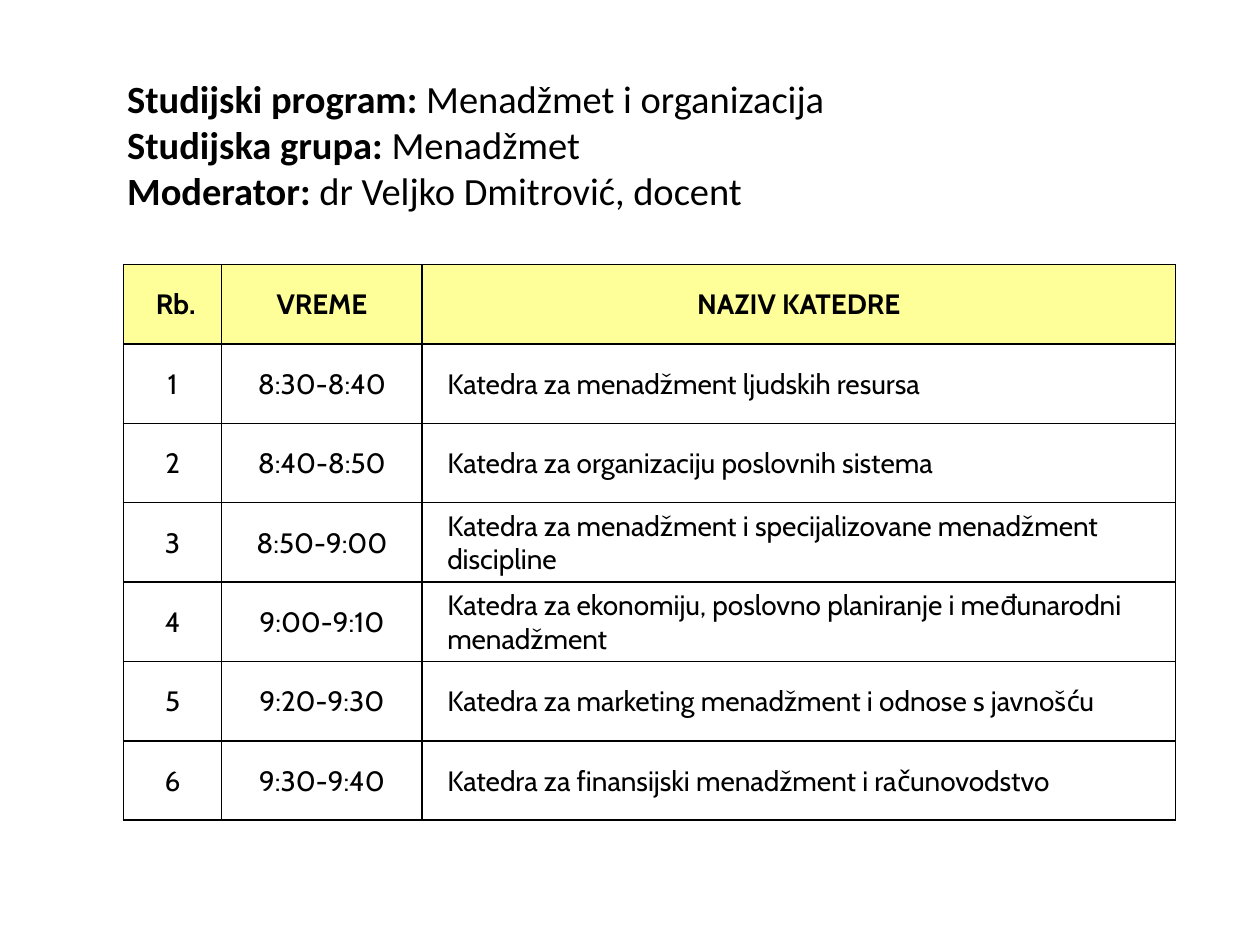
from dataclasses import dataclass

from lxml.etree import fromstring
from pptx import Presentation
from pptx.dml.color import RGBColor as Color
from pptx.enum.text import MSO_ANCHOR as Anchor, MSO_AUTO_SIZE as AutoSize, PP_ALIGN as Align
from pptx.util import Inches, Pt

DRAWING_NS = "http://schemas.openxmlformats.org/drawingml/2006/main"
TITLE_ONLY = 5


@dataclass(frozen=True)
class Theme:
    ink: str = "000000"
    header_fill: str = "FFFF99"
    title_font: str = "Calibri"
    table_font: str = "Cabin"
    title_size: int = 22
    table_size: int = 16
    border: int = 1


THEME = Theme()

# Boxes are left, top, width, height in inches
TITLE_BOX = (0.91, 0.52, 9, 1.25)
TABLE_BOX = (0.98, 2.1, 8.35, 4.41)
COLUMN_SHARES = (0.78, 1.59, 5.98)
NAME_COLUMN = 2

TITLE_LINES = [
    ("Studijski program: ", "Menadžmet i organizacija"),
    ("Studijska grupa: ", "Menadžmet"),
    ("Moderator: ", "dr Veljko Dmitrović, docent"),
]
SCHEDULE = [
    ("\u00a0Rb.", "VREME", "NAZIV KATEDRE"),
    ("1", "8:30-8:40", "Katedra za menadžment ljudskih resursa"),
    ("2", "8:40-8:50", "Katedra za organizaciju poslovnih sistema"),
    ("3", "8:50-9:00", "Katedra za menadžment i specijalizovane menadžment discipline"),
    ("4", "9:00-9:10", "Katedra za ekonomiju, poslovno planiranje i međunarodni menadžment"),
    ("5", "9:20-9:30", "Katedra za marketing menadžment i odnose s javnošću"),
    ("6", "9:30-9:40", "Katedra za finansijski menadžment i računovodstvo"),
]


def add_text(para, text, *, font, size, bold=False, color=THEME.ink):
    span = para.add_run()
    span.text = text
    span.font.name = font
    span.font.size = Pt(size)
    span.font.bold = bold
    span.font.color.rgb = Color.from_string(color)


def set_borders(cell):
    """Draw all four sides; line elements must come before the cell's fill."""
    properties = cell._tc.get_or_add_tcPr()
    for position, side in enumerate(("lnL", "lnR", "lnT", "lnB")):
        properties.insert(position, fromstring(
            f'<a:{side} xmlns:a="{DRAWING_NS}" w="{Pt(THEME.border)}">'
            f'<a:solidFill><a:srgbClr val="{THEME.ink}"/></a:solidFill></a:{side}>'))


def place_title(page, box):
    title = page.shapes.title
    title.left, title.top, title.width, title.height = map(Inches, box)
    frame = title.text_frame
    frame.word_wrap = True
    frame.auto_size = AutoSize.NONE
    frame.vertical_anchor = Anchor.MIDDLE
    para = frame.paragraphs[0]
    para.alignment = Align.LEFT
    style = dict(font=THEME.title_font, size=THEME.title_size)
    for number, (label, value) in enumerate(TITLE_LINES):
        if number:
            para.add_line_break()
        add_text(para, label, bold=True, **style)
        add_text(para, value, **style)


def fill_cell(cell, text, *, header, indented):
    cell.vertical_anchor = Anchor.MIDDLE
    cell.margin_left = cell.margin_right = cell.margin_top = Inches(0.01)
    cell.margin_bottom = 0
    if header:
        cell.fill.solid()
        cell.fill.fore_color.rgb = Color.from_string(THEME.header_fill)
    else:
        cell.fill.background()
    set_borders(cell)
    para = cell.text_frame.paragraphs[0]
    para.alignment = Align.LEFT if indented else Align.CENTER
    if indented:
        para._p.get_or_add_pPr().set("marL", str(Inches(0.19)))
    add_text(para, text, font=THEME.table_font, size=THEME.table_size, bold=header)


def place_schedule(page, box):
    left, top, width, height = map(Inches, box)
    table = page.shapes.add_table(
        len(SCHEDULE), len(COLUMN_SHARES), left, top, width, height).table
    table.first_row = table.horz_banding = False
    for column, share in zip(table.columns, COLUMN_SHARES):
        column.width = int(width * share / sum(COLUMN_SHARES))
    for row, entries in enumerate(SCHEDULE):
        table.rows[row].height = height // len(SCHEDULE)
        for column, text in enumerate(entries):
            header = row == 0
            fill_cell(table.cell(row, column), text, header=header,
                      indented=column == NAME_COLUMN and not header)


def main():
    deck = Presentation()
    deck.slide_width, deck.slide_height = Inches(10), Inches(7.5)
    page = deck.slides.add_slide(deck.slide_layouts[TITLE_ONLY])
    place_title(page, TITLE_BOX)
    place_schedule(page, TABLE_BOX)
    deck.save("out.pptx")


if __name__ == "__main__":
    main()
